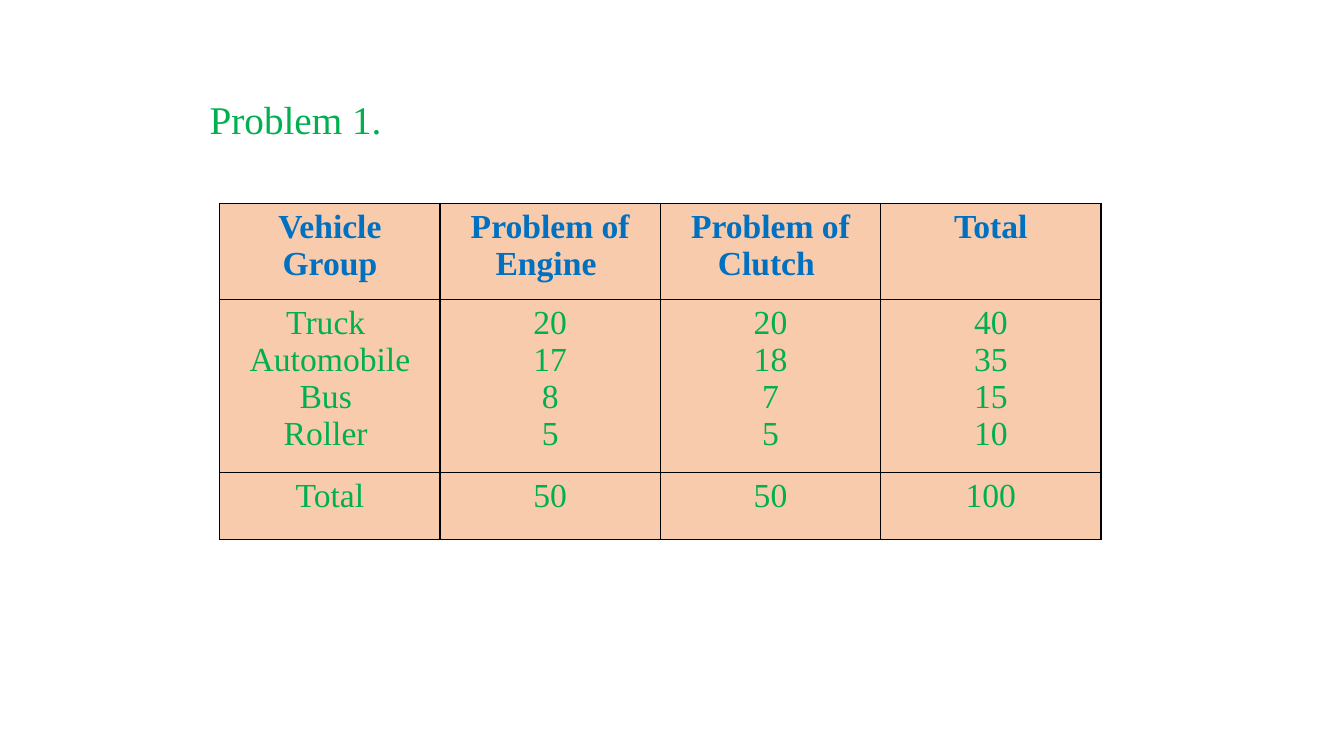
from dataclasses import dataclass

from lxml import etree
from pptx import Presentation
from pptx.dml.color import RGBColor
from pptx.enum.text import MSO_ANCHOR, MSO_AUTO_SIZE, PP_ALIGN
from pptx.oxml.ns import qn
from pptx.table import Table, _Cell
from pptx.text.text import TextFrame
from pptx.util import Inches, Length, Pt

LEFT, CENTER = PP_ALIGN.LEFT, PP_ALIGN.CENTER
TOP, MIDDLE = MSO_ANCHOR.TOP, MSO_ANCHOR.MIDDLE
FIT_SHAPE = MSO_AUTO_SIZE.SHAPE_TO_FIT_TEXT
TITLE_ONLY_LAYOUT = 5

FONT = "Times New Roman"
GREEN, BLUE, PEACH, BLACK = "00B050", "0070C0", "F8CBAD", "000000"
SLIDE_WIDTH, SLIDE_HEIGHT = Inches(13.33), Inches(7.5)
BORDER_SIDES = ("a:lnL", "a:lnR", "a:lnT", "a:lnB")


@dataclass(frozen=True)
class Box:
    """Position and size in percent of the slide."""

    left: float
    top: float
    width: float
    height: float

    def lengths(self) -> tuple[Length, Length, Length, Length]:
        return (across(self.left), down(self.top), across(self.width), down(self.height))


@dataclass(frozen=True)
class TableRow:
    """One row; its height is in percent of the slide."""

    height: float
    cells: tuple[str, ...]
    color: str = GREEN
    bold: bool = False


TITLE_BOX = Box(14.85, 11.87, 71.19, 7.6)
TABLE_BOX = Box(16.35, 26.93, 65.57, 44.4)
ROWS = (
    TableRow(
        12.67,
        ("Vehicle Group", "Problem of\nEngine ", "Problem of\nClutch ", "Total"),
        color=BLUE,
        bold=True,
    ),
    TableRow(
        22.93,
        ("Truck \nAutomobile\nBus \nRoller ", "20\n17\n8\n5", "20\n18\n7\n5", "40\n35\n15\n10"),
    ),
    TableRow(8.8, ("Total", "50", "50", "100")),
)


def across(percent: float) -> Length:
    return Length(round(SLIDE_WIDTH * percent / 100))


def down(percent: float) -> Length:
    return Length(round(SLIDE_HEIGHT * percent / 100))


def rgb(value: str) -> RGBColor:
    return RGBColor.from_string(value)


def write_text(
    frame: TextFrame,
    text: str,
    *,
    size: float,
    color: str,
    bold: bool = False,
    alignment: PP_ALIGN = LEFT,
) -> None:
    """Write each line of the text as its own paragraph."""
    frame.word_wrap = True
    frame.text = text
    for paragraph in frame.paragraphs:
        paragraph.alignment = alignment
        for run in paragraph.runs:
            run.font.name = FONT
            run.font.size = Pt(size)
            run.font.bold = bold
            run.font.color.rgb = rgb(color)


def add_borders(cell: _Cell, color: str, width: float) -> None:
    """Outline a cell; borders must come before the fill in its properties."""
    properties = cell._tc.get_or_add_tcPr()
    for index, side in enumerate(BORDER_SIDES):
        line = etree.Element(qn(side), w=str(Pt(width)))
        fill = etree.SubElement(line, qn("a:solidFill"))
        etree.SubElement(fill, qn("a:srgbClr"), val=color)
        properties.insert(index, line)


def fill_table(table: Table, rows: tuple[TableRow, ...]) -> None:
    for column in table.columns:
        column.width = across(TABLE_BOX.width / len(table.columns))
    for row_index, row in enumerate(rows):
        table.rows[row_index].height = down(row.height)
        for column_index, text in enumerate(row.cells):
            cell = table.cell(row_index, column_index)
            cell.vertical_anchor = TOP
            cell.fill.solid()
            cell.fill.fore_color.rgb = rgb(PEACH)
            add_borders(cell, BLACK, 1)
            write_text(
                cell.text_frame,
                text,
                size=24,
                color=row.color,
                bold=row.bold,
                alignment=CENTER,
            )


def main() -> None:
    presentation = Presentation()
    presentation.slide_width = SLIDE_WIDTH
    presentation.slide_height = SLIDE_HEIGHT
    slide = presentation.slides.add_slide(presentation.slide_layouts[TITLE_ONLY_LAYOUT])

    title = slide.shapes.title
    title.left, title.top, title.width, title.height = TITLE_BOX.lengths()
    write_text(title.text_frame, "Problem 1.", size=28, color=GREEN)
    title.text_frame.vertical_anchor = MIDDLE
    title.text_frame.auto_size = FIT_SHAPE

    table_frame = slide.shapes.add_table(len(ROWS), len(ROWS[0].cells), *TABLE_BOX.lengths())
    fill_table(table_frame.table, ROWS)
    presentation.save("out.pptx")


if __name__ == "__main__":
    main()
